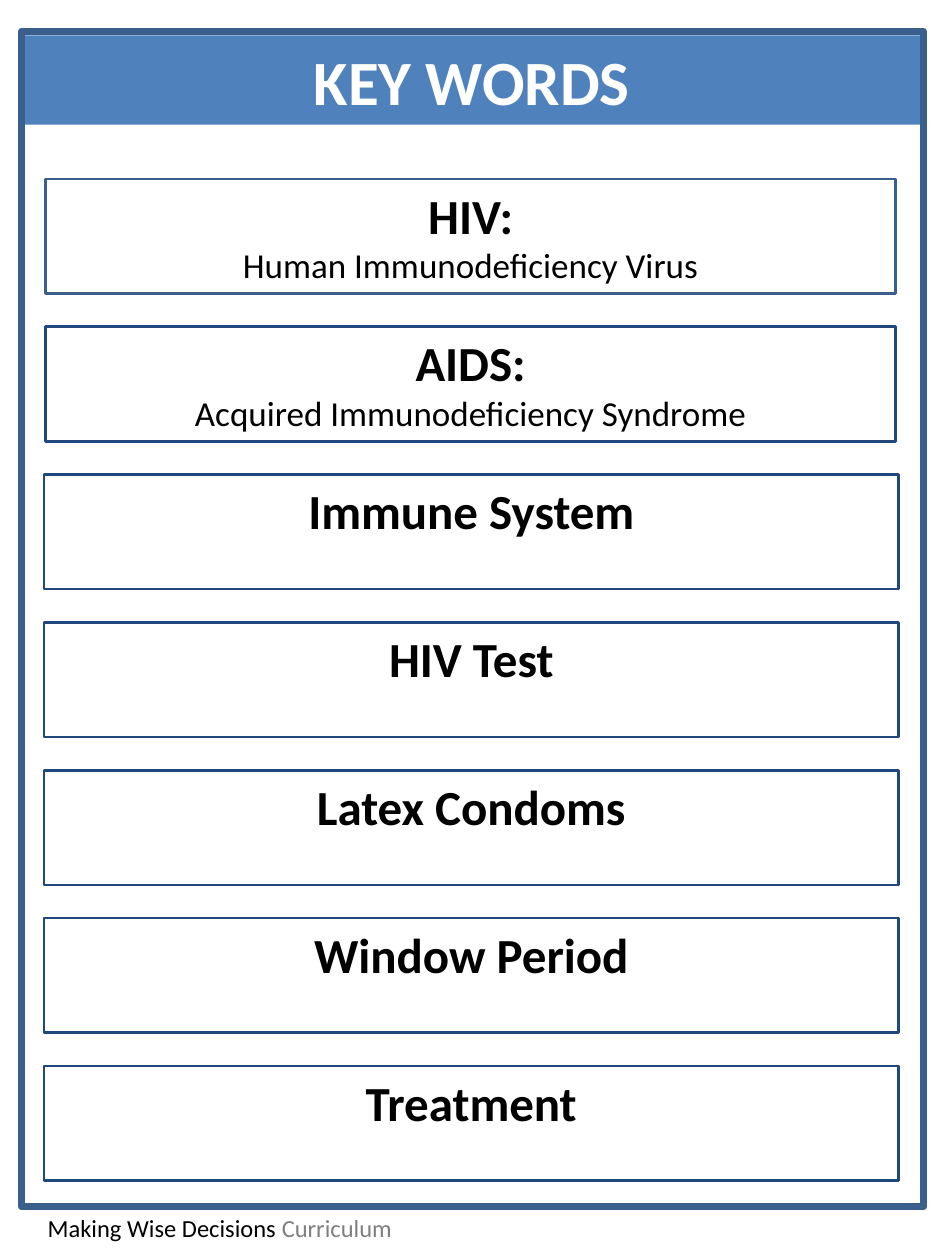
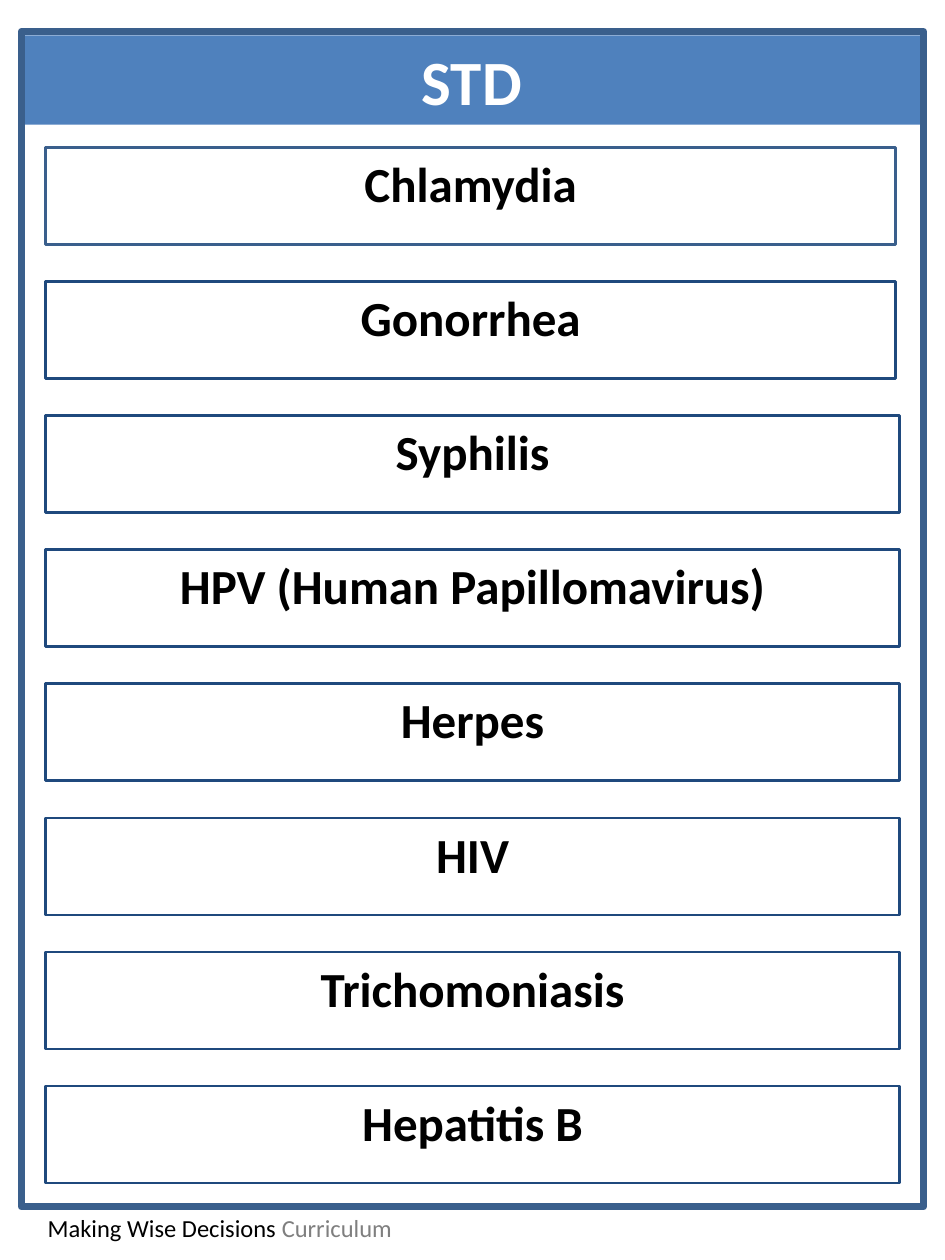
from pptx import Presentation
from pptx.dml.color import RGBColor
from pptx.enum import shapes, text
from pptx.util import Inches, Pt

COLORS = {
    "band": "4F81BD",
    "frame": "3A5F8C",
    "card": "1F497D",
    "ink": "000000",
    "muted": "7F7F7F",
    "white": "FFFFFF",
}
FONT = "Calibri"
TITLE_ONLY = 5
NARROW_ROWS = 2

KEY_WORDS = [
    ("HIV:", "Human Immunodeficiency Virus"),
    ("AIDS:", "Acquired Immunodeficiency Syndrome"),
    ("Immune System",),
    ("HIV Test",),
    ("Latex Condoms",),
    ("Window Period",),
    ("Treatment",),
]
STDS = [
    ("Chlamydia",),
    ("Gonorrhea",),
    ("Syphilis",),
    ("HPV (Human Papillomavirus)",),
    ("Herpes",),
    ("HIV",),
    ("Trichomoniasis",),
    ("Hepatitis B",),
]


def color(name):
    return RGBColor.from_string(COLORS[name])


def style_span(span, size, ink, bold=False):
    span.font.name = FONT
    span.font.size = Pt(size)
    span.font.bold = bold
    span.font.color.rgb = color(ink)


def add_outline(page, box, line, weight):
    outline = page.shapes.add_shape(
        shapes.MSO_SHAPE.RECTANGLE, *(Inches(length) for length in box))
    outline.shadow.inherit = False
    outline.fill.background()
    outline.line.color.rgb = color(line)
    outline.line.width = Pt(weight)
    return outline


def add_title(page, box, words):
    title = page.shapes.title
    title.left, title.top, title.width, title.height = (
        Inches(length) for length in box)
    title.fill.solid()
    title.fill.fore_color.rgb = color("band")
    frame = title.text_frame
    frame.text = words
    frame.auto_size = text.MSO_AUTO_SIZE.NONE
    frame.vertical_anchor = text.MSO_ANCHOR.MIDDLE
    para = frame.paragraphs[0]
    para.alignment = text.PP_ALIGN.CENTER
    style_span(para.runs[0], 36, "white", True)


def add_footer(page, box):
    footer = page.shapes.add_textbox(*(Inches(length) for length in box))
    footer.text_frame.word_wrap = True
    para = footer.text_frame.paragraphs[0]
    for words, ink in (("Making Wise Decisions ", "ink"), ("Curriculum", "muted")):
        span = para.add_run()
        span.text = words
        style_span(span, 14, ink)


def add_card(page, box, lines, line_color):
    card = add_outline(page, box, line_color, 1.5)
    frame = card.text_frame
    frame.word_wrap = True
    frame.vertical_anchor = text.MSO_ANCHOR.TOP
    frame.text = "\n".join(lines)
    for index, para in enumerate(frame.paragraphs):
        para.alignment = text.PP_ALIGN.CENTER
        style_span(para.runs[0], 20 if index else 28, "ink", index == 0)


def add_cards(page, box, terms, card_height):
    left, top, width, height = box
    step = (height - card_height) / (len(terms) - 1)
    for row, lines in enumerate(terms):
        narrow = row < NARROW_ROWS
        card_box = (0.36 if narrow else left, top + row * step,
                    6.75 if narrow else width, card_height)
        add_card(page, card_box, lines, "card" if row else "frame")


def add_word_page(deck, heading, terms, cards_box, card_height):
    page = deck.slides.add_slide(deck.slide_layouts[TITLE_ONLY])
    add_footer(page, (0.28, 9.58, 3.4, 0.34))
    add_outline(page, (0.17, 0.25, 7.16, 9.33), "frame", 4)
    add_title(page, (0.19, 0.28, 7.11, 0.71), heading)
    add_cards(page, cards_box, terms, card_height)


def main():
    deck = Presentation()
    deck.slide_width = Inches(7.5)
    deck.slide_height = Inches(10)
    add_word_page(deck, "KEY WORDS", KEY_WORDS, (0.35, 1.42, 6.78, 7.95), 0.91)
    add_word_page(deck, "STD", STDS, (0.36, 1.17, 6.78, 8.22), 0.77)
    deck.save("out.pptx")


if __name__ == "__main__":
    main()
